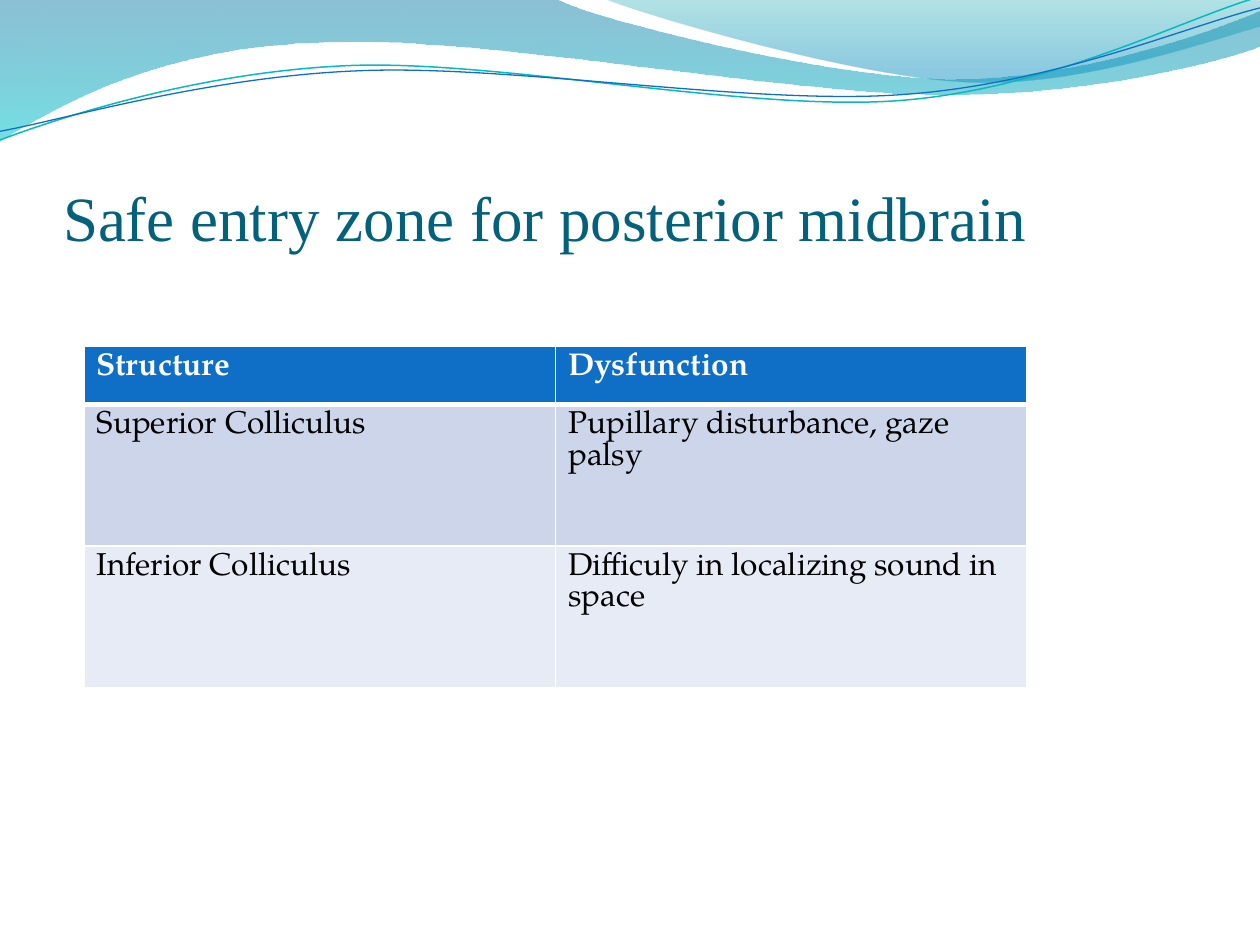
from lxml.etree import SubElement
from pptx import Presentation
from pptx.dml.color import RGBColor
from pptx.enum.text import MSO_ANCHOR as Anchor, PP_ALIGN as Align
from pptx.oxml.ns import qn
from pptx.util import Pt

TITLE_FONT = "Times New Roman"
TABLE_FONT = "TeX Gyre Pagella"

BROAD_WAVE = [(0, 0), (317, -1), (343, 12, 478, 45, 546, 45),
              (614, 45, 690, 19, 720, 6), (721, 26),
              (708, 32, 626, 55, 537, 54), (447, 54, 275, 20, 185, 24),
              (93, 26, 33, 60, -1, 81)]
RIGHT_WAVE = [(345, -1), (366, 8, 491, 45, 554, 47),
              (616, 50, 692, 23, 720, 15), (720, 0)]
TEAL_STRAND = [(0, 80), (34.5, 67, 114, 41, 199.5, 37.5),
               (284.5, 34, 427, 64, 513.5, 57.5), (600, 51, 675.5, 11, 718.5, -1.5)]
BLUE_STRAND = [(0, 75), (34, 69, 118, 44, 204, 40.5),
               (290, 36.5, 430, 60.5, 516, 54), (602, 48, 678, 15, 720, 4.5)]

ROWS = [("Structure", "Dysfunction"),
        ("Superior Colliculus", "Pupillary disturbance, gaze palsy"),
        ("Inferior Colliculus", "Difficuly in localizing sound in space")]
ROW_FILLS = ["0F6FC6", "CCD5EA", "E7EBF5"]


def color(hex_code):
    """Turn a hex string into a colour."""
    return RGBColor.from_string(hex_code)


def style_font(font, name, size, hex_code, bold=False):
    """Set typeface, size, colour and weight."""
    font.name, font.size, font.bold = name, Pt(size), bold
    font.color.rgb = color(hex_code)


def add_outline(slide, left, top, outline, close):
    """Draw straight and cubic segments offset from the given corner."""
    points = [(Pt(left + segment[i]), Pt(top + segment[i + 1]))
              for segment in outline for i in range(0, len(segment), 2)]
    builder = slide.shapes.build_freeform(*points[0])
    builder.add_line_segments(points[1:], close=close)
    shape = builder.convert_to_shape()
    shape.shadow.inherit = False
    edges = iter(list(shape.element.spPr.iter(qn("a:lnTo"))))
    for segment in outline[1:]:
        edge = next(edges)
        if len(segment) == 6:
            curve = edge.makeelement(qn("a:cubicBezTo"))
            edge.addprevious(curve)
            for handle in (edge, next(edges), next(edges)):
                curve.append(handle[0])
                handle.getparent().remove(handle)
    return shape


def add_wave(slide, left, top, outline, stops):
    """Add a wave with a translucent top-to-bottom gradient."""
    wave = add_outline(slide, left, top, outline, True)
    wave.line.fill.background()
    wave.fill.gradient()
    wave.fill.gradient_angle = 270
    for stop, (position, hex_code, opacity) in zip(wave.fill.gradient_stops, stops):
        stop.position = position
        stop.color.rgb = color(hex_code)
    rgb_elements = wave.element.spPr.find(qn("a:gradFill")).iter(qn("a:srgbClr"))
    for rgb, (position, hex_code, opacity) in zip(rgb_elements, stops):
        SubElement(rgb, qn("a:alpha")).set("val", str(opacity * 1000))


def add_strand(slide, left, top, outline, hex_code, width):
    """Add a thin curved line."""
    strand = add_outline(slide, left, top, outline, False)
    strand.fill.background()
    strand.line.color.rgb = color(hex_code)
    strand.line.width = Pt(width)


def add_header_waves(slide, left, top):
    """Decorate the top edge with waves and strands."""
    add_wave(slide, left, top, BROAD_WAVE,
             [(0, "0074A1", 45), (1, "00C6CF", 55)])
    add_wave(slide, left, top, RIGHT_WAVE,
             [(0, "00A1A9", 30), (0.8, "008BBF", 45)])
    add_strand(slide, left, top, TEAL_STRAND, "0AB8BF", 0.85)
    add_strand(slide, left, top, BLUE_STRAND, "0F6FC6", 0.75)


def place_title(slide, left, top, width, height):
    """Place and format the title placeholder."""
    title = slide.shapes.title
    title.left, title.top = Pt(left), Pt(top)
    title.width, title.height = Pt(width), Pt(height)
    frame = title.text_frame
    frame.text = "Safe entry zone for posterior midbrain"
    frame.word_wrap = True
    frame.vertical_anchor = Anchor.BOTTOM
    frame.margin_left = frame.margin_right = frame.margin_bottom = 0
    frame.margin_top = Pt(3.6)
    heading = frame.paragraphs[0]
    heading.alignment = Align.LEFT
    style_font(heading.runs[0].font, TITLE_FONT, 36, "04617B")


def set_borders(cell, widths):
    """Draw white cell borders, given widths by side."""
    properties = cell._tc.get_or_add_tcPr()
    for index, (side, width) in enumerate(widths.items()):
        border = properties.makeelement(qn(f"a:ln{side}"), {"w": str(Pt(width))})
        fill = SubElement(border, qn("a:solidFill"))
        SubElement(fill, qn("a:srgbClr")).set("val", "FFFFFF")
        properties.insert(index, border)


def add_dysfunction_table(slide, left, top, width, height):
    """Add the table of structures and their dysfunctions."""
    header_height = 33
    body_height = (height - header_height) / (len(ROWS) - 1)
    table = slide.shapes.add_table(len(ROWS), len(ROWS[0]), Pt(left), Pt(top),
                                   Pt(width), Pt(height)).table
    for column in table.columns:
        column.width = Pt(width / len(ROWS[0]))
    for r, (texts, fill) in enumerate(zip(ROWS, ROW_FILLS)):
        is_header = r == 0
        table.rows[r].height = Pt(header_height if is_header else body_height)
        for c, text in enumerate(texts):
            cell = table.cell(r, c)
            cell.fill.solid()
            cell.fill.fore_color.rgb = color(fill)
            set_borders(cell, {"L": 1, "R": 1, "T": 3 if r == 1 else 1,
                               "B": 3 if is_header else 1})
            cell.text_frame.text = text
            style_font(cell.text_frame.paragraphs[0].runs[0].font, TABLE_FONT, 18,
                       "FFFFFF" if is_header else "000000", is_header)


def main():
    """Build and save the slide."""
    deck = Presentation()
    deck.slide_width, deck.slide_height = Pt(720), Pt(540)
    slide = deck.slides.add_slide(deck.slide_layouts[5])
    add_header_waves(slide, 0, 0)
    place_title(slide, 36, 55.5, 648, 90)
    add_dysfunction_table(slide, 48, 198, 539, 195)
    deck.save("out.pptx")


if __name__ == "__main__":
    main()
